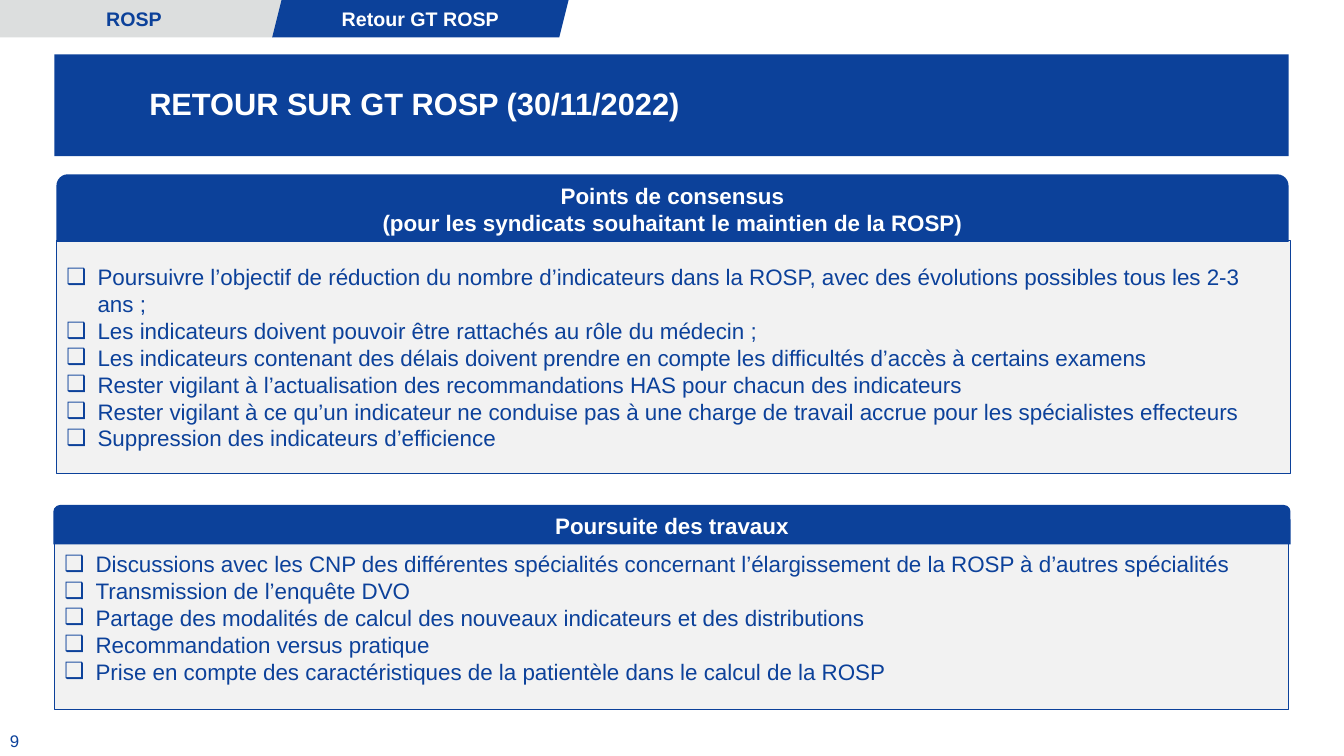
from dataclasses import dataclass

from lxml.etree import SubElement
from pptx import Presentation
from pptx.dml.color import RGBColor
from pptx.enum.shapes import MSO_SHAPE as Shape
from pptx.enum.text import MSO_ANCHOR as Anchor, MSO_AUTO_SIZE as AutoSize, PP_ALIGN as Align
from pptx.oxml.ns import qn
from pptx.util import Emu, Pt

PX = 9144  # 100 px to the inch


@dataclass(frozen=True)
class Theme:
    font: str = "Arial"
    blue: str = "0C419A"
    white: str = "FFFFFF"
    tab_gray: str = "DCDEDE"
    panel_gray: str = "F2F2F2"
    title_size: int = 22
    body_size: int = 16
    tab_size: int = 14
    number_size: int = 12


THEME = Theme()

TABS = [("ROSP", THEME.tab_gray, THEME.blue),
        ("Retour GT ROSP", THEME.blue, THEME.white)]

CONSENSUS_HEADER = ["Points de consensus",
                    "(pour les syndicats souhaitant le maintien de la ROSP)"]
CONSENSUS_POINTS = [
    "Poursuivre l’objectif de réduction du nombre d’indicateurs dans la ROSP, "
    "avec des évolutions possibles tous les 2-3 ans ;",
    "Les indicateurs doivent pouvoir être rattachés au rôle du médecin ;",
    "Les indicateurs contenant des délais doivent prendre en compte les difficultés "
    "d’accès à certains examens",
    "Rester vigilant à l’actualisation des recommandations HAS pour chacun des indicateurs",
    "Rester vigilant à ce qu’un indicateur ne conduise pas à une charge de travail accrue "
    "pour les spécialistes effecteurs",
    "Suppression des indicateurs d’efficience",
]
NEXT_HEADER = ["Poursuite des travaux"]
NEXT_POINTS = [
    "Discussions avec les CNP des différentes spécialités concernant l’élargissement "
    "de la ROSP à d’autres spécialités",
    "Transmission de l’enquête DVO",
    "Partage des modalités de calcul des nouveaux indicateurs et des distributions",
    "Recommandation versus pratique",
    "Prise en compte des caractéristiques de la patientèle dans le calcul de la ROSP",
]


def place(box):
    return [Emu(length * PX) for length in box]


def rgb(color):
    return RGBColor.from_string(color)


def set_fill(shape, color):
    shape.fill.solid()
    shape.fill.fore_color.rgb = rgb(color)


def add_box(slide, kind, box, fill, line=None):
    shape = slide.shapes.add_shape(kind, *place(box))
    shape.shadow.inherit = False
    set_fill(shape, fill)
    if line:
        shape.line.color.rgb = rgb(line)
        shape.line.width = Pt(0.75)
    else:
        shape.line.fill.background()
    return shape


def add_bullet(paragraph):
    properties = paragraph._p.get_or_add_pPr()
    indent = 31 * PX
    properties.set("marL", str(indent))
    properties.set("indent", str(-indent))
    SubElement(properties, qn("a:buFont"), typeface=THEME.font)
    SubElement(properties, qn("a:buChar"), char="❑")


def write(shape, lines, size, color, bold=False, align=Align.LEFT,
          anchor=Anchor.MIDDLE, bullets=False):
    """Fill the shape's text frame with one paragraph per line."""
    frame = shape.text_frame
    frame.word_wrap = True
    frame.vertical_anchor = anchor
    for index, line in enumerate(lines):
        paragraph = frame.add_paragraph() if index else frame.paragraphs[0]
        paragraph.alignment = align
        if bullets:
            add_bullet(paragraph)
        run = paragraph.add_run()
        run.text = line
        run.font.name = THEME.font
        run.font.size = Pt(size)
        run.font.bold = bold
        run.font.color.rgb = rgb(color)


def add_title(slide, box, text):
    title = slide.shapes.title
    title.left, title.top, title.width, title.height = place(box)
    set_fill(title, THEME.blue)
    write(title, [text], THEME.title_size, THEME.white, bold=True)
    frame = title.text_frame
    frame.auto_size = AutoSize.NONE
    frame.margin_left = Emu(94 * PX)
    frame.margin_top = frame.margin_right = frame.margin_bottom = Emu(8 * PX)
    frame.paragraphs[0].line_spacing = 0.9
    frame.paragraphs[0].space_before = Pt(0)


def add_tabs(slide, box):
    """Lay the tabs left to right; box is the first tab."""
    left, top, width, height = box
    overlap = 10
    for index, (label, fill, color) in enumerate(TABS):
        tab_box = (left + index * (width - overlap), top, width, height)
        tab = add_box(slide, Shape.PARALLELOGRAM, tab_box, fill)
        write(tab, [label], THEME.tab_size, color, bold=True, align=Align.CENTER)


def add_panel(slide, header_box, header_lines, body_box, points):
    body = add_box(slide, Shape.RECTANGLE, body_box, THEME.panel_gray, THEME.blue)
    write(body, points, THEME.body_size, THEME.blue, bullets=True)
    header = add_box(slide, Shape.ROUND_2_SAME_RECTANGLE, header_box, THEME.blue)
    write(header, header_lines, THEME.body_size, THEME.white, bold=True,
          align=Align.CENTER, anchor=Anchor.TOP)


def add_page_number(slide, box, number):
    text_box = slide.shapes.add_textbox(*place(box))
    write(text_box, [number], THEME.number_size, THEME.blue)


def main():
    presentation = Presentation()
    presentation.slide_width, presentation.slide_height = place((1333, 750))
    slide = presentation.slides.add_slide(presentation.slide_layouts[5])
    add_page_number(slide, (0, 719, 79, 31), "9")
    add_title(slide, (54, 54, 1224, 101), "RETOUR SUR GT ROSP (30/11/2022)")
    add_tabs(slide, (-14, 0, 294, 37))
    add_panel(slide, (56, 173, 1222, 67), CONSENSUS_HEADER,
              (56, 239, 1224, 231), CONSENSUS_POINTS)
    add_panel(slide, (53, 501, 1227, 39), NEXT_HEADER,
              (54, 521, 1224, 183), NEXT_POINTS)
    presentation.save("out.pptx")


if __name__ == "__main__":
    main()
